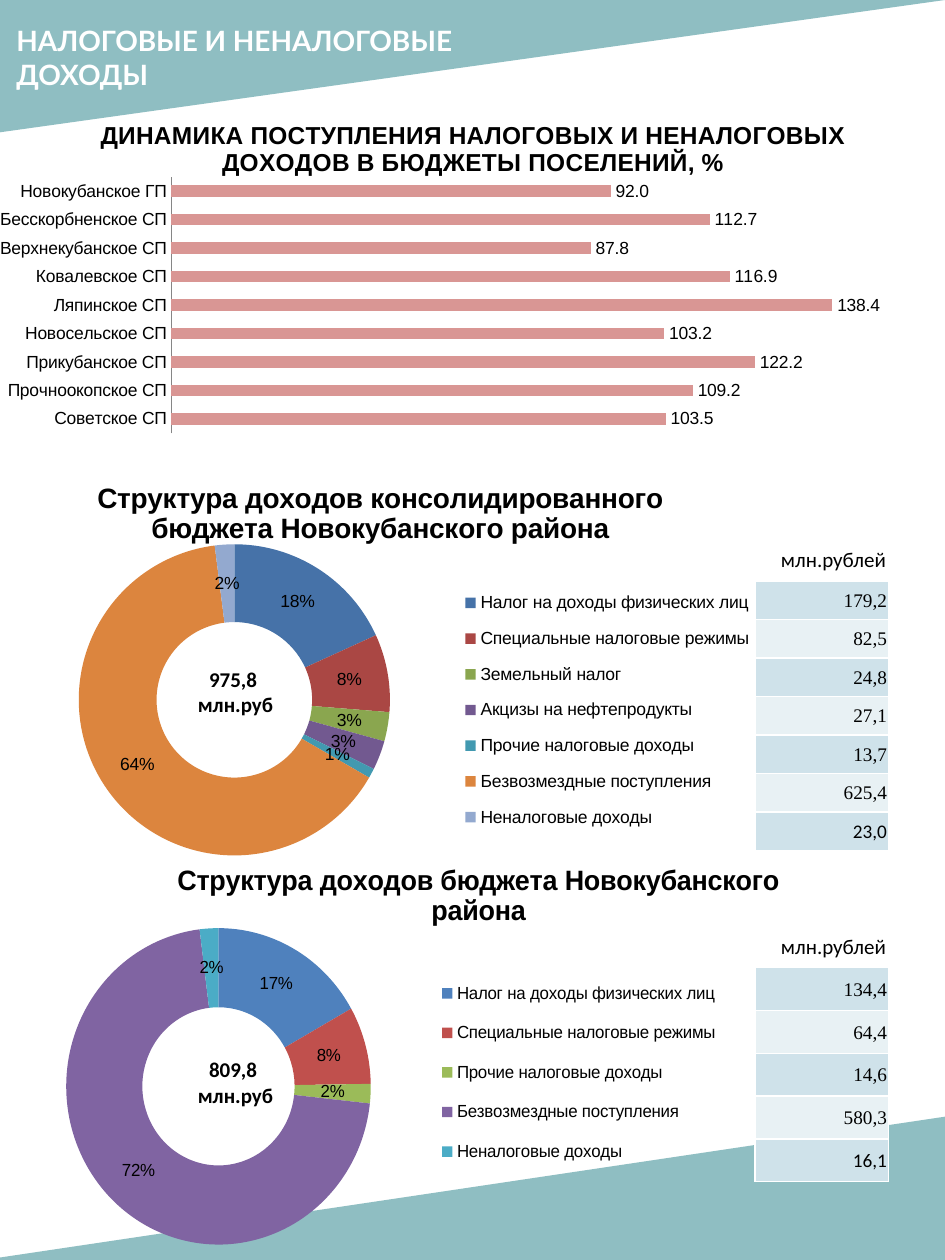
from lxml import etree
from pptx import Presentation
from pptx.chart.data import CategoryChartData
from pptx.dml.color import RGBColor
from pptx.enum.chart import XL_CHART_TYPE, XL_LABEL_POSITION, XL_LEGEND_POSITION, XL_TICK_LABEL_POSITION, XL_TICK_MARK
from pptx.enum.shapes import MSO_SHAPE
from pptx.enum.text import MSO_ANCHOR, PP_ALIGN
from pptx.oxml.ns import qn
from pptx.util import Inches, Pt

BAR, DOUGHNUT = XL_CHART_TYPE.BAR_CLUSTERED, XL_CHART_TYPE.DOUGHNUT
OUTSIDE, LEGEND_RIGHT = XL_LABEL_POSITION.OUTSIDE_END, XL_LEGEND_POSITION.RIGHT
NO_TICK, NO_LABELS = XL_TICK_MARK.NONE, XL_TICK_LABEL_POSITION.NONE
TRIANGLE, MIDDLE, TOP = MSO_SHAPE.RIGHT_TRIANGLE, MSO_ANCHOR.MIDDLE, MSO_ANCHOR.TOP
LEFT, CENTER, RIGHT = PP_ALIGN.LEFT, PP_ALIGN.CENTER, PP_ALIGN.RIGHT

HEADER = "НАЛОГОВЫЕ И НЕНАЛОГОВЫЕ ДОХОДЫ"
UNIT = "млн.рублей"
TRIANGLES = [((0, 0, 7.5, 1.05), "flipH"), ((-0.13, 8.86, 7.65, 1.14), "flipV")]
SETTLEMENTS = {
    "title": "ДИНАМИКА ПОСТУПЛЕНИЯ НАЛОГОВЫХ И НЕНАЛОГОВЫХ ДОХОДОВ В БЮДЖЕТЫ ПОСЕЛЕНИЙ, %",
    "title_size": 14, "title_at": (0.1, 0.04),
    "box": (0, 0.8, 7.5, 2.75), "plot": (0.18, 0.22, 0.81, 0.74),
    "data": [
        ("Новокубанское ГП", 92), ("Бесскорбненское СП", 112.7), ("Верхнекубанское СП", 87.8),
        ("Ковалевское СП", 116.9), ("Ляпинское СП", 138.4), ("Новосельское СП", 103.2),
        ("Прикубанское СП", 122.2), ("Прочноокопское СП", 109.2), ("Советское СП", 103.5),
    ],
}
BUDGETS = [
    {
        "title": "Структура доходов консолидированного бюджета Новокубанского района",
        "title_size": 16, "title_at": (0.12, 0.03),
        "box": (0, 3.67, 6.1, 3.25), "plot": (0.1, 0.2, 0.41, 0.76), "legend": (0.6, 0.28, 0.38, 0.65),
        "data": [
            ("Налог на доходы физических лиц", 18, "4672A8", "179,2"),
            ("Специальные налоговые режимы", 8, "AA4744", "82,5"),
            ("Земельный налог", 3, "8AA64F", "24,8"),
            ("Акцизы на нефтепродукты", 3, "725990", "27,1"),
            ("Прочие налоговые доходы", 1, "4299B0", "13,7"),
            ("Безвозмездные поступления", 64, "DC853E", "625,4"),
            ("Неналоговые доходы", 2, "93A9CF", "23,0"),
        ],
        "total": "975,8", "total_top": 5.24, "unit_top": 4.29, "table": (5.99, 4.61, 1.06, 2.14),
    },
    {
        "title": "Структура доходов бюджета Новокубанского района",
        "title_size": 16, "title_at": (0.24, 0.01),
        "box": (-0.09, 6.77, 6.32, 3.14), "plot": (0.1, 0.19, 0.4, 0.8), "legend": (0.58, 0.28, 0.38, 0.55),
        "data": [
            ("Налог на доходы физических лиц", 17, "4F81BD", "134,4"),
            ("Специальные налоговые режимы", 8, "C0504D", "64,4"),
            ("Прочие налоговые доходы", 2, "9BBB59", "14,6"),
            ("Безвозмездные поступления", 72, "8064A2", "580,3"),
            ("Неналоговые доходы", 2, "4BACC6", "16,1"),
        ],
        "total": "809,8", "total_top": 8.34, "unit_top": 7.36, "table": (5.99, 7.68, 1.06, 1.7),
    },
]


def inches(box):
    """Turn a box in inches into lengths."""
    return [Inches(value) for value in box]


def paint(fill, color):
    """Fill with one solid colour."""
    fill.solid()
    fill.fore_color.rgb = RGBColor.from_string(color)


def style(font, size, name, color="000000", bold=False):
    """Set size, typeface, colour and weight of a font."""
    font.size, font.name, font.bold = Pt(size), name, bold
    font.color.rgb = RGBColor.from_string(color)


def add_triangle(slide, box, flip):
    """Add a translucent corner triangle."""
    shape = slide.shapes.add_shape(TRIANGLE, *inches(box))
    shape.shadow.inherit = False
    shape.rotation = 180
    shape.line.fill.background()
    paint(shape.fill, "519AA0")
    properties = shape._element.spPr
    properties.find(qn("a:xfrm")).set(flip, "1")
    etree.SubElement(next(properties.iter(qn("a:srgbClr"))), qn("a:alpha"), val="64000")


def add_text(slide, box, lines, alignment=LEFT, bold=False):
    """Add a text box with one paragraph per line."""
    frame = slide.shapes.add_textbox(*inches(box)).text_frame
    frame.word_wrap = True
    frame.text = "\n".join(lines)
    for paragraph in frame.paragraphs:
        paragraph.alignment = alignment
        style(paragraph.font, 12, "Calibri", bold=bold)


def add_table(slide, box, values):
    """Add a one-column table with alternating fills and white borders."""
    table = slide.shapes.add_table(len(values), 1, *inches(box)).table
    for index, value in enumerate(values):
        table.rows[index].height = Inches(box[3] / len(values))
        cell = table.cell(index, 0)
        cell.text = value
        cell.vertical_anchor = MIDDLE
        cell.margin_left = cell.margin_right = cell.margin_top = Inches(0.01)
        cell.margin_bottom = 0
        paint(cell.fill, "E8F1F4" if index % 2 else "CFE2EA")
        paragraph = cell.text_frame.paragraphs[0]
        paragraph.alignment = RIGHT
        style(paragraph.font, 11, "Calibri" if index == len(values) - 1 else "Times New Roman")
        properties = cell._tc.get_or_add_tcPr()
        for position, side in enumerate(("lnL", "lnR", "lnT", "lnB")):
            border = etree.Element(qn("a:" + side), w=str(Pt(0.96)))
            fill = etree.SubElement(border, qn("a:solidFill"))
            etree.SubElement(fill, qn("a:srgbClr"), val="FFFFFF")
            properties.insert(position, border)


def place(element, index, values, inner=False):
    """Give a chart part a manual layout in fractions of the chart."""
    for old in element.findall(qn("c:layout")):
        element.remove(old)
    layout = etree.Element(qn("c:layout"))
    manual = etree.SubElement(layout, qn("c:manualLayout"))
    settings = [("layoutTarget", "inner")] if inner else []
    settings += [("xMode", "edge"), ("yMode", "edge"), *zip("xywh", values)]
    for name, value in settings:
        etree.SubElement(manual, qn("c:" + name), val=str(value))
    element.insert(index, layout)


def add_chart(slide, kind, content, label_format):
    """Add a titled single-series chart and return it with its series."""
    data = CategoryChartData()
    data.categories = [row[0] for row in content["data"]]
    data.add_series("Series 1", [row[1] for row in content["data"]])
    chart = slide.shapes.add_chart(kind, *inches(content["box"]), data).chart
    style(chart.font, 10, "Arial")
    chart.has_legend = False
    chart.chart_title.text_frame.text = content["title"]
    paragraph = chart.chart_title.text_frame.paragraphs[0]
    style(paragraph.font, content["title_size"], "Arial", bold=True)
    place(chart.chart_title._element, 1, content["title_at"])
    place(chart._chartSpace.chart.plotArea, 0, content["plot"], inner=True)
    plot = chart.plots[0]
    plot.has_data_labels = True
    labels = plot.data_labels
    labels.show_value, labels.show_percentage = True, False
    labels.number_format, labels.number_format_is_linked = label_format, False
    style(labels.font, 10, "Arial")
    return chart, plot.series[0]


def add_settlement_bars(slide, content):
    """Add the bar chart of settlement revenue."""
    chart, series = add_chart(slide, BAR, content, "0.0")
    plot = chart.plots[0]
    plot.gap_width, plot.overlap, plot.vary_by_categories = 150, -25, False
    plot.data_labels.position = OUTSIDE
    paint(series.format.fill, "D99694")
    categories, values = chart.category_axis, chart.value_axis
    categories.reverse_order = True
    categories.major_tick_mark = NO_TICK
    categories.format.line.color.rgb = RGBColor.from_string("868686")
    values.minimum_scale, values.maximum_scale = 0, 160
    values.has_major_gridlines = values.visible = False
    values.tick_label_position = NO_LABELS


def add_budget(slide, content):
    """Add a doughnut with its total, unit and table of amounts."""
    chart, series = add_chart(slide, DOUGHNUT, content, '0"%"')
    for index, row in enumerate(content["data"]):
        paint(series.points[index].format.fill, row[2])
    chart.has_legend = True
    chart.legend.position = LEGEND_RIGHT
    chart.legend.include_in_layout = False
    style(chart.legend.font, 10, "Arial")
    place(chart.legend._element, 1, content["legend"])
    add_text(slide, (1.41, content["total_top"], 0.88, 0.5), [content["total"], " млн.руб"], CENTER, bold=True)
    add_text(slide, (6.1, content["unit_top"], 1.2, 0.3), [UNIT])
    add_table(slide, content["table"], [row[3] for row in content["data"]])


def main():
    """Build and save the slide."""
    presentation = Presentation()
    presentation.slide_width, presentation.slide_height = Inches(7.5), Inches(10)
    slide = presentation.slides.add_slide(presentation.slide_layouts[5])
    for box, flip in TRIANGLES:
        add_triangle(slide, box, flip)
    title = slide.shapes.title
    title.left, title.top, title.width, title.height = inches((0.03, 0.14, 4.51, 0.63))
    title.text_frame.text = HEADER
    title.text_frame.vertical_anchor = TOP
    paragraph = title.text_frame.paragraphs[0]
    paragraph.alignment = LEFT
    style(paragraph.font, 16, "Lato", "FFFFFF", bold=True)
    slide.shapes._spTree.append(title._element)
    add_settlement_bars(slide, SETTLEMENTS)
    for budget in BUDGETS:
        add_budget(slide, budget)
    presentation.save("out.pptx")


if __name__ == "__main__":
    main()
